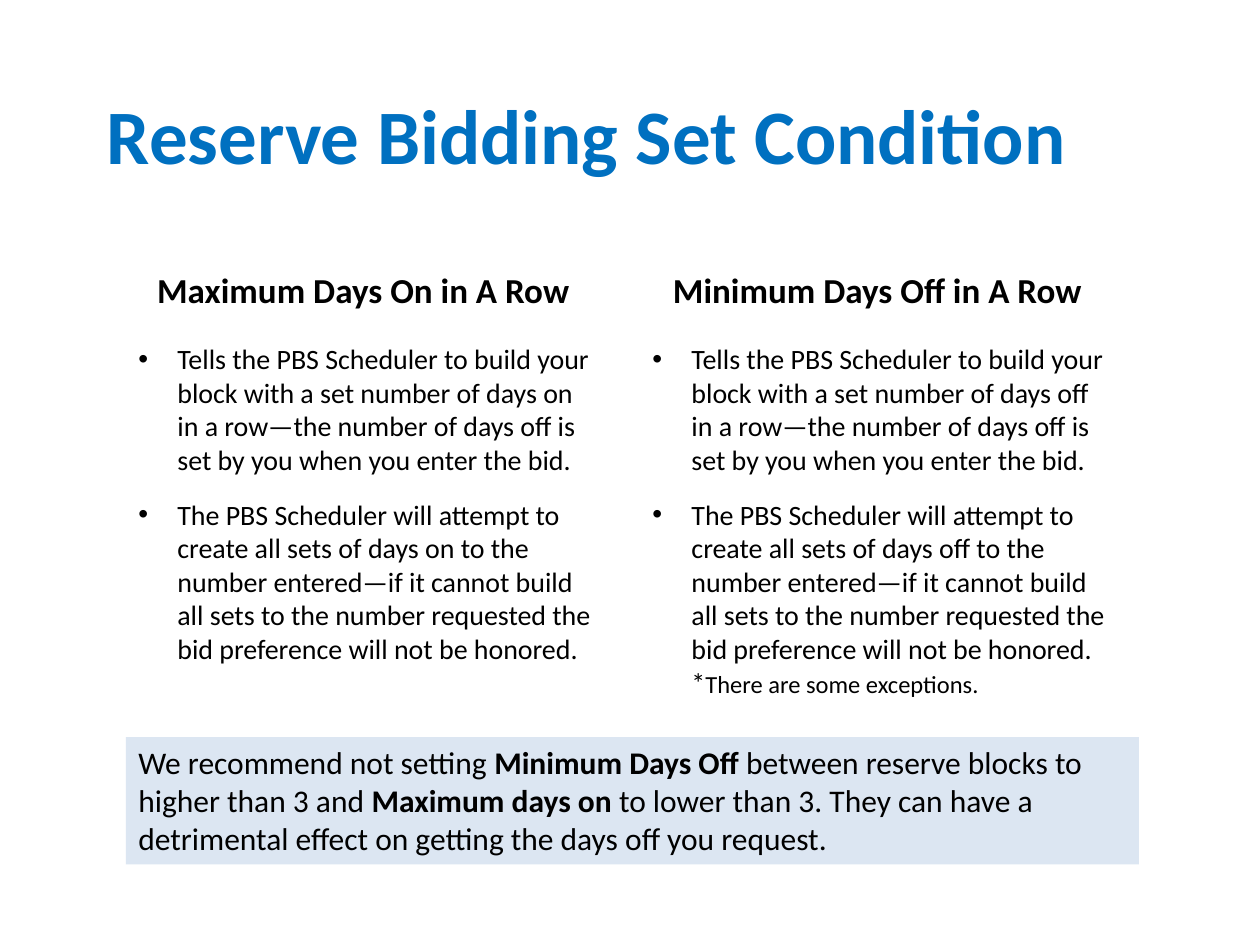
from lxml import etree
from pptx import Presentation, util as u
from pptx.dml.color import RGBColor
from pptx.enum import shapes, text
from pptx.oxml import ns

FONT = "Calibri"
COLORS = {"title": "0070C0", "text": "000000", "panel": "FFFFFF", "note": "DCE6F2"}
INDENT = u.Inches(0.31)


def color(name):
    return RGBColor.from_string(COLORS[name])


def add_run(para, words, size, bold=False, ink="text"):
    run = para.add_run()
    run.text = words
    run.font.name = FONT
    run.font.size = u.Pt(size)
    run.font.bold = bold
    run.font.color.rgb = color(ink)


def add_panel(slide, left, top, width, height, fill):
    """Add a plain filled rectangle and return its text frame."""
    box = slide.shapes.add_shape(
        shapes.MSO_SHAPE.RECTANGLE,
        u.Inches(left), u.Inches(top), u.Inches(width), u.Inches(height))
    box.shadow.inherit = False
    box.fill.solid()
    box.fill.fore_color.rgb = color(fill)
    box.line.fill.background()
    frame = box.text_frame
    frame.word_wrap = True
    frame.auto_size = text.MSO_AUTO_SIZE.SHAPE_TO_FIT_TEXT
    frame.vertical_anchor = text.MSO_ANCHOR.TOP
    frame.paragraphs[0].alignment = text.PP_ALIGN.LEFT
    return frame


def add_bullet(frame, words):
    para = frame.add_paragraph()
    para.alignment = text.PP_ALIGN.LEFT
    props = para._p.get_or_add_pPr()
    props.set("marL", str(INDENT))
    props.set("indent", str(-INDENT))
    etree.SubElement(props, ns.qn("a:buFont"), typeface="Arial")
    etree.SubElement(props, ns.qn("a:buChar"), char="•")
    para.space_before = para.space_after = u.Pt(6)
    add_run(para, words, 16)
    return para


def add_column(slide, left, height, head, state, mark=""):
    """Add a heading with its two bullets; return the last bullet."""
    frame = add_panel(slide, left, 2.08, 3.83, height, "panel")
    para = frame.paragraphs[0]
    para.alignment = text.PP_ALIGN.CENTER
    para.space_after = u.Pt(12)
    add_run(para, head, 20, bold=True)
    add_bullet(frame, f"Tells the PBS Scheduler to build your block with a set number of "
                      f"days {state} in a row—the number of days off is set by you when "
                      f"you enter the bid.")
    return add_bullet(frame, f"The PBS Scheduler will attempt to create all sets of days "
                             f"{state} to the number entered—if it cannot build all sets to "
                             f"the number requested the bid preference will not be "
                             f"honored.{mark}")


def add_title(slide, words):
    box = slide.shapes.add_textbox(
        u.Inches(0.75), u.Inches(0.58), u.Inches(9.25), u.Inches(0.97))
    frame = box.text_frame
    frame.word_wrap = True
    frame.vertical_anchor = text.MSO_ANCHOR.MIDDLE
    add_run(frame.paragraphs[0], words, 44, bold=True, ink="title")


def add_note(slide, parts):
    """Add the advice bar; each part is its words and whether they are bold."""
    para = add_panel(slide, 1, 5.85, 8.04, 1.01, "note").paragraphs[0]
    para.space_after = u.Pt(6)
    for words, bold in parts:
        add_run(para, words, 18, bold)


def main():
    deck = Presentation()
    deck.slide_width, deck.slide_height = u.Inches(10), u.Inches(7.5)
    slide = deck.slides.add_slide(deck.slide_layouts[6])

    # Title
    add_title(slide, "Reserve Bidding Set Condition")

    # Two columns
    add_column(slide, 1, 3.28, "Maximum Days On in A Row ", "on")
    last = add_column(slide, 5.08, 3.55, "Minimum Days Off in A Row ", "off", " *")
    add_run(last, "There are some exceptions.", 14)

    # Advice
    add_note(slide, [
        ("We recommend not setting ", False),
        ("Minimum Days Off ", True),
        ("between reserve blocks to higher than 3 and ", False),
        ("Maximum days on ", True),
        ("to lower than 3. They can have a detrimental effect on getting "
         "the days off you request.", False),
    ])

    deck.save("out.pptx")


if __name__ == "__main__":
    main()
